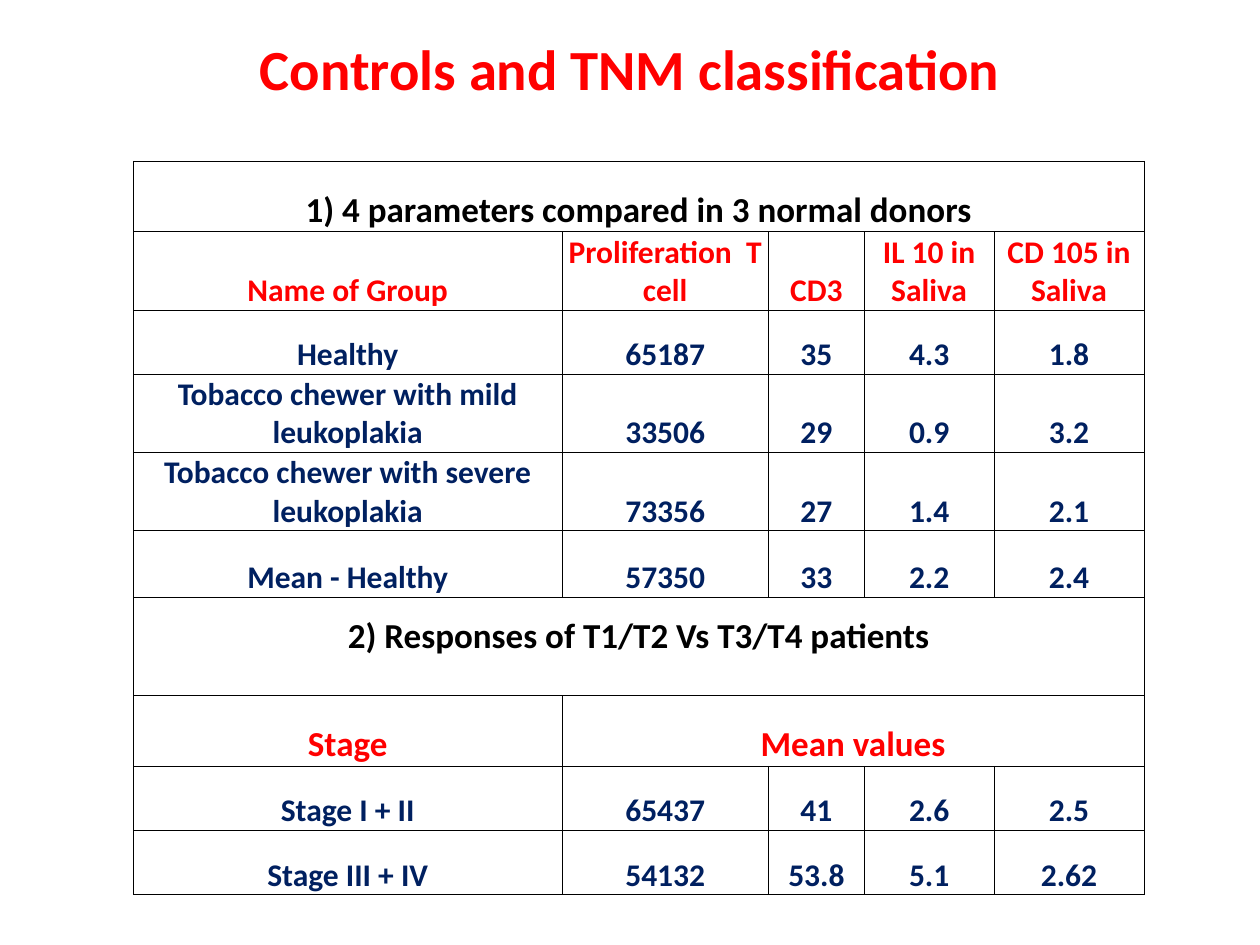
from dataclasses import dataclass

from lxml.etree import SubElement
from pptx import Presentation
from pptx.dml.color import RGBColor
from pptx.enum.text import MSO_ANCHOR, PP_ALIGN
from pptx.oxml.ns import qn
from pptx.util import Inches, Pt


@dataclass(frozen=True)
class Theme:
    font: str = "Calibri"
    accent: str = "FF0000"
    body: str = "002060"
    heading: str = "000000"
    paper: str = "FFFFFF"
    rule: str = "000000"
    title_size: float = 32.4
    heading_size: float = 20
    body_size: float = 18
    thin: float = 0.5
    thick: float = 1


THEME = Theme()
SLIDE_W, SLIDE_H = 10, 7.5

# Row kind: text size and colour
STYLES = {
    "section": (THEME.heading_size, THEME.heading),
    "columns": (THEME.body_size, THEME.accent),
    "stages": (THEME.heading_size, THEME.accent),
    "data": (THEME.body_size, THEME.body),
}

COLUMNS = (3.4, 1.64, 0.76, 1.03, 1.19)

# Row kind, height, texts; the last text spans the columns left over
ROWS = (
    ("section", 0.56, ["1) 4 parameters compared in 3 normal donors"]),
    ("columns", 0.62, ["Name of Group", "Proliferation  T cell", "CD3",
                       "IL 10 in Saliva", "CD 105 in Saliva"]),
    ("data", 0.51, ["Healthy", "65187", "35", "4.3", "1.8"]),
    ("data", 0.62, ["Tobacco chewer with mild leukoplakia",
                    "33506", "29", "0.9", "3.2"]),
    ("data", 0.62, ["Tobacco chewer with severe leukoplakia",
                    "73356", "27", "1.4", "2.1"]),
    ("data", 0.53, ["Mean - Healthy", "57350", "33", "2.2", "2.4"]),
    ("section", 0.78, ["2) Responses of T1/T2 Vs T3/T4 patients"]),
    ("stages", 0.56, ["Stage", "Mean values"]),
    ("data", 0.51, ["Stage I + II", "65437", "41", "2.6", "2.5"]),
    ("data", 0.51, ["Stage III + IV", "54132", "53.8", "5.1", "2.62"]),
)
DONOR_ROWS = range(2, 5)   # heavier left edge
RAISED_ROW = 6             # heading lifted off the row's bottom


def style_paragraph(p, size, color):
    p.alignment = PP_ALIGN.CENTER
    p.font.name = THEME.font
    p.font.size = Pt(size)
    p.font.bold = True
    p.font.color.rgb = RGBColor.from_string(color)


def set_borders(cell, left_width):
    """Rule all four sides; lines must precede the fill in tcPr."""
    tc_pr = cell.fill._xPr
    widths = {"a:lnL": left_width, "a:lnR": THEME.thin,
              "a:lnT": THEME.thin, "a:lnB": THEME.thin}
    for i, (tag, width) in enumerate(widths.items()):
        ln = SubElement(tc_pr, qn(tag), w=str(Pt(width)))
        fill = SubElement(ln, qn("a:solidFill"))
        SubElement(fill, qn("a:srgbClr"), val=THEME.rule)
        tc_pr.insert(i, ln)


def add_title(slide, left, top, width, height):
    tf = slide.shapes.add_textbox(
        Inches(left), Inches(top), Inches(width), Inches(height)).text_frame
    tf.word_wrap = True
    tf.vertical_anchor = MSO_ANCHOR.MIDDLE
    p = tf.paragraphs[0]
    p.text = "Controls and TNM classification"
    style_paragraph(p, THEME.title_size, THEME.accent)


def add_results(slide, left, top, width, height):
    table = slide.shapes.add_table(
        len(ROWS), len(COLUMNS), Inches(left), Inches(top),
        Inches(width), Inches(height)).table
    table.first_row = table.horz_banding = False
    for column, share in zip(table.columns, COLUMNS):
        column.width = Inches(width * share / sum(COLUMNS))

    total = sum(row_height for _, row_height, _ in ROWS)
    last = len(COLUMNS) - 1
    for r, (kind, row_height, texts) in enumerate(ROWS):
        table.rows[r].height = Inches(height * row_height / total)
        # Ruled, white cells with tight margins
        for c in range(len(COLUMNS)):
            cell = table.cell(r, c)
            cell.fill.solid()
            cell.fill.fore_color.rgb = RGBColor.from_string(THEME.paper)
            heavy = c == 0 and r in DONOR_ROWS
            set_borders(cell, THEME.thick if heavy else THEME.thin)
            cell.margin_left = cell.margin_right = Inches(0.01)
            cell.margin_top = Inches(0.01)
            cell.margin_bottom = Inches(0.3 if r == RAISED_ROW else 0)
            cell.vertical_anchor = MSO_ANCHOR.BOTTOM
            style_paragraph(cell.text_frame.paragraphs[0], *STYLES[kind])
        # Texts, with the last one merged to the right edge
        for c, text in enumerate(texts):
            table.cell(r, c).text_frame.paragraphs[0].text = text
        if len(texts) <= last:
            table.cell(r, len(texts) - 1).merge(table.cell(r, last))


def main():
    prs = Presentation()
    prs.slide_width, prs.slide_height = Inches(SLIDE_W), Inches(SLIDE_H)
    slide = prs.slides.add_slide(prs.slide_layouts[6])
    add_results(slide, 1.06, 1.28, sum(COLUMNS),
                sum(row_height for _, row_height, _ in ROWS))
    add_title(slide, 0.5, 0.31, SLIDE_W - 1, 0.46)
    prs.save("out.pptx")


if __name__ == "__main__":
    main()
